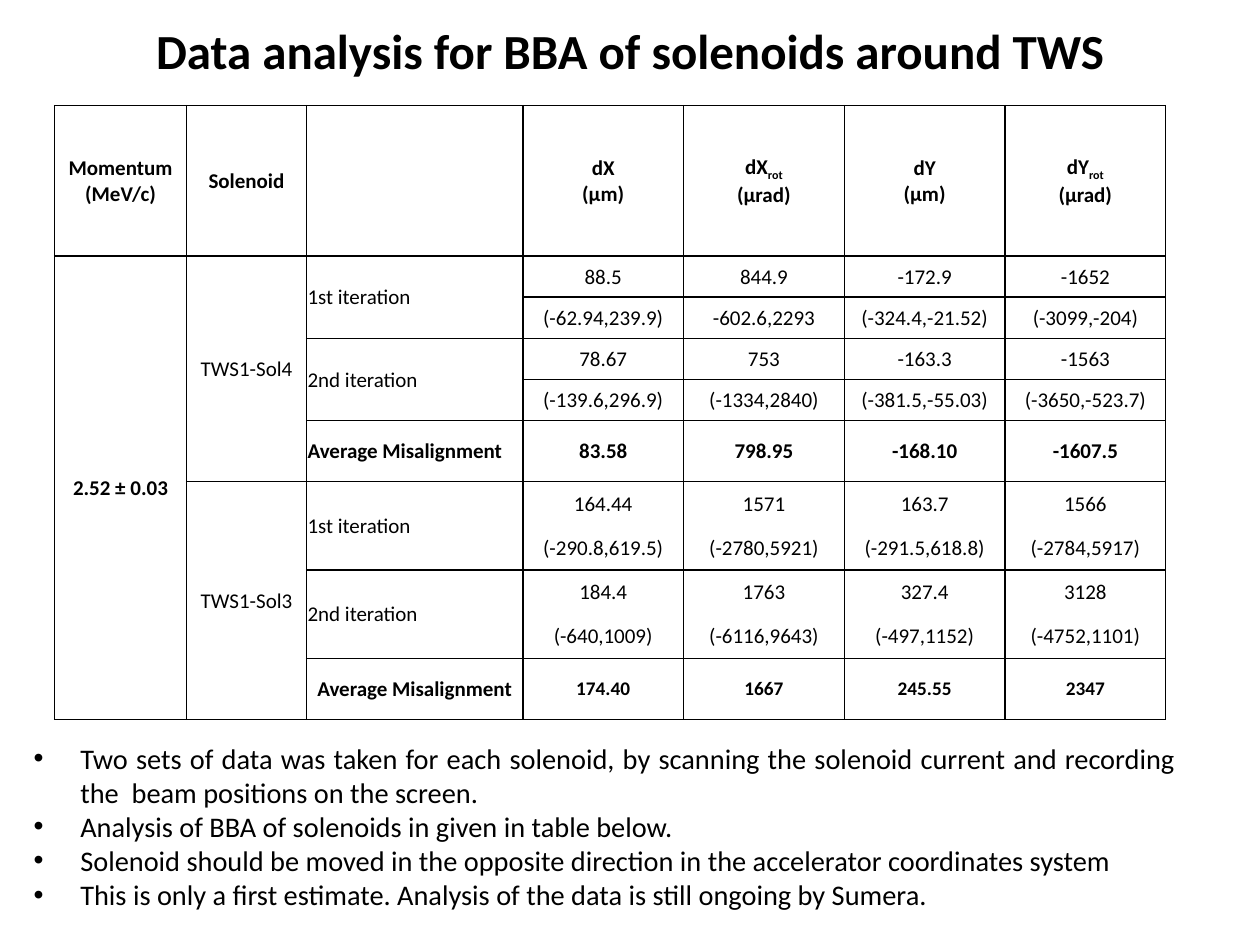
from lxml import etree
from pptx import Presentation
from pptx.dml.color import RGBColor
from pptx.enum.text import MSO_ANCHOR, MSO_AUTO_SIZE, PP_ALIGN
from pptx.oxml.ns import qn
from pptx.util import Cm, Pt

MIDDLE, TOP = MSO_ANCHOR.MIDDLE, MSO_ANCHOR.TOP
LEFT, CENTER, JUSTIFY = PP_ALIGN.LEFT, PP_ALIGN.CENTER, PP_ALIGN.JUSTIFY
NO_FIT = MSO_AUTO_SIZE.NONE
FONT, BLACK = "Calibri", "000000"
TITLE = "Data analysis for BBA of solenoids around TWS"
MEAN = "Average Misalignment"
HEAD = ["Momentum\n(MeV/c)", "Solenoid", "", "dX\n(µm)", "dX_rot\n(µrad)",
        "dY\n(µm)", "dY_rot\n(µrad)"]
ROWS = [
    ["2.52 ± 0.03", "TWS1-Sol4", "1st iteration", "88.5", "844.9", "-172.9", "-1652"],
    ["", "", "", "(-62.94,239.9)", "-602.6,2293", "(-324.4,-21.52)", "(-3099,-204)"],
    ["", "", "2nd iteration", "78.67", "753", "-163.3", "-1563"],
    ["", "", "", "(-139.6,296.9)", "(-1334,2840)", "(-381.5,-55.03)", "(-3650,-523.7)"],
    ["", "", MEAN, "83.58", "798.95", "-168.10", "-1607.5"],
    ["", "TWS1-Sol3", "1st iteration", "164.44", "1571", "163.7", "1566"],
    ["", "", "", "(-290.8,619.5)", "(-2780,5921)", "(-291.5,618.8)", "(-2784,5917)"],
    ["", "", "2nd iteration", "184.4", "1763", "327.4", "3128"],
    ["", "", "", "(-640,1009)", "(-6116,9643)", "(-497,1152)", "(-4752,1101)"],
    ["", "", MEAN, "174.40", "1667", "245.55", "2347"],
]
NOTES = [
    "Two sets of data was taken for each solenoid, by scanning the solenoid "
    "current and recording the  beam positions on the screen.",
    "Analysis of BBA of solenoids in given in table below.",
    "Solenoid should be moved in the opposite direction in the accelerator "
    "coordinates system",
    "This is only a first estimate. Analysis of the data is still ongoing by Sumera.",
]
WIDTHS = [2.66, 2.42, 4.36] + [3.24] * 4
HEIGHTS = [3.03] + [0.83] * 4 + [1.23] + [0.89] * 4 + [1.23]
MERGES = [(1, 0, 10), (1, 1, 5), (6, 1, 5)] + [(row, 2, 2) for row in (1, 3, 6, 8)]
OPEN = (6, 8)


def color(code):
    """Turn a hex string into a colour."""
    return RGBColor.from_string(code)


def style(para, size, bold, align):
    """Format a paragraph and all its runs."""
    para.alignment = align
    for run in para.runs:
        font = run.font
        font.name, font.size, font.bold = FONT, Pt(size), bold
        font.color.rgb = color(BLACK)


def place(shape, left, top, width, height):
    """Set the position and size of a shape."""
    shape.left, shape.top = Cm(left), Cm(top)
    shape.width, shape.height = Cm(width), Cm(height)


def border(cell, hidden):
    """Draw black cell edges, except the hidden one."""
    props = cell._tc.get_or_add_tcPr()
    for side in "LRTB":
        line = etree.SubElement(props, qn(f"a:ln{side}"), w=str(Pt(1)))
        if side == hidden:
            etree.SubElement(line, qn("a:noFill"))
        else:
            fill = etree.SubElement(line, qn("a:solidFill"))
            etree.SubElement(fill, qn("a:srgbClr"), val=BLACK)


def write(cell, text, size, bold, align):
    """Fill a cell, lowering whatever follows an underscore."""
    frame = cell.text_frame
    frame.text = text.replace("_rot", "")
    for para, line in zip(frame.paragraphs, text.split("\n")):
        if "_" in line:
            low = para.add_run()
            low.text = line.split("_")[1]
            low.font._element.set("baseline", "-25000")
        style(para, size, bold, align)


def add_title(slide):
    """Format the title placeholder."""
    title = slide.shapes.title
    place(title, 0, 0.28, 25.4, 1.45)
    frame = title.text_frame
    frame.text = TITLE
    frame.auto_size, frame.vertical_anchor = NO_FIT, MIDDLE
    style(frame.paragraphs[0], 28, True, CENTER)


def add_grid(slide):
    """Add the table of misalignments."""
    frame = slide.shapes.add_table(len(HEIGHTS), len(WIDTHS), Cm(1.1), Cm(2.13),
                                   Cm(sum(WIDTHS)), Cm(sum(HEIGHTS)))
    table = frame.table
    table.first_row = table.horz_banding = False
    for col, width in zip(table.columns, WIDTHS):
        col.width = Cm(width)
    for row, height in zip(table.rows, HEIGHTS):
        row.height = Cm(height)
    for r, texts in enumerate([HEAD] + ROWS):
        for c, text in enumerate(texts):
            cell = table.cell(r, c)
            cell.margin_left = cell.margin_right = Cm(0.02)
            cell.margin_top, cell.margin_bottom = Cm(0.02), 0
            cell.vertical_anchor = MIDDLE
            hidden = ""
            if c > 2:
                hidden = "B" if r in OPEN else "T" if r - 1 in OPEN else ""
            border(cell, hidden)
            cell.fill.background()
            last = r == len(ROWS)
            mean = c > 1 and texts[2] == MEAN
            bold = r == 0 or c == 0 or mean
            size = 11 if last and c > 2 else 12
            align = LEFT if c == 2 and not last else CENTER
            write(cell, text, size, bold, align)
    for row, col, span in MERGES:
        table.cell(row, col).merge(table.cell(row + span - 1, col))


def add_notes(slide):
    """Add the bulleted remarks."""
    box = slide.shapes.add_textbox(0, 0, 0, 0)
    place(box, 0.43, 14.94, 23.5, 4.19)
    frame = box.text_frame
    frame.word_wrap, frame.vertical_anchor = True, TOP
    frame.margin_top = 0
    frame.text = "\n".join(NOTES)
    for para in frame.paragraphs:
        style(para, 16.2, False, JUSTIFY)
        props = para._p.get_or_add_pPr()
        props.set("marL", str(Cm(0.94)))
        props.set("indent", str(-Cm(0.94)))
        etree.SubElement(props, qn("a:buFont"), typeface="Arial")
        etree.SubElement(props, qn("a:buChar"), char="•")


def main():
    """Build and save the slide."""
    deck = Presentation()
    deck.slide_width, deck.slide_height = Cm(25.4), Cm(19.05)
    slide = deck.slides.add_slide(deck.slide_layouts[5])
    add_title(slide)
    add_grid(slide)
    add_notes(slide)
    deck.save("out.pptx")


if __name__ == "__main__":
    main()
